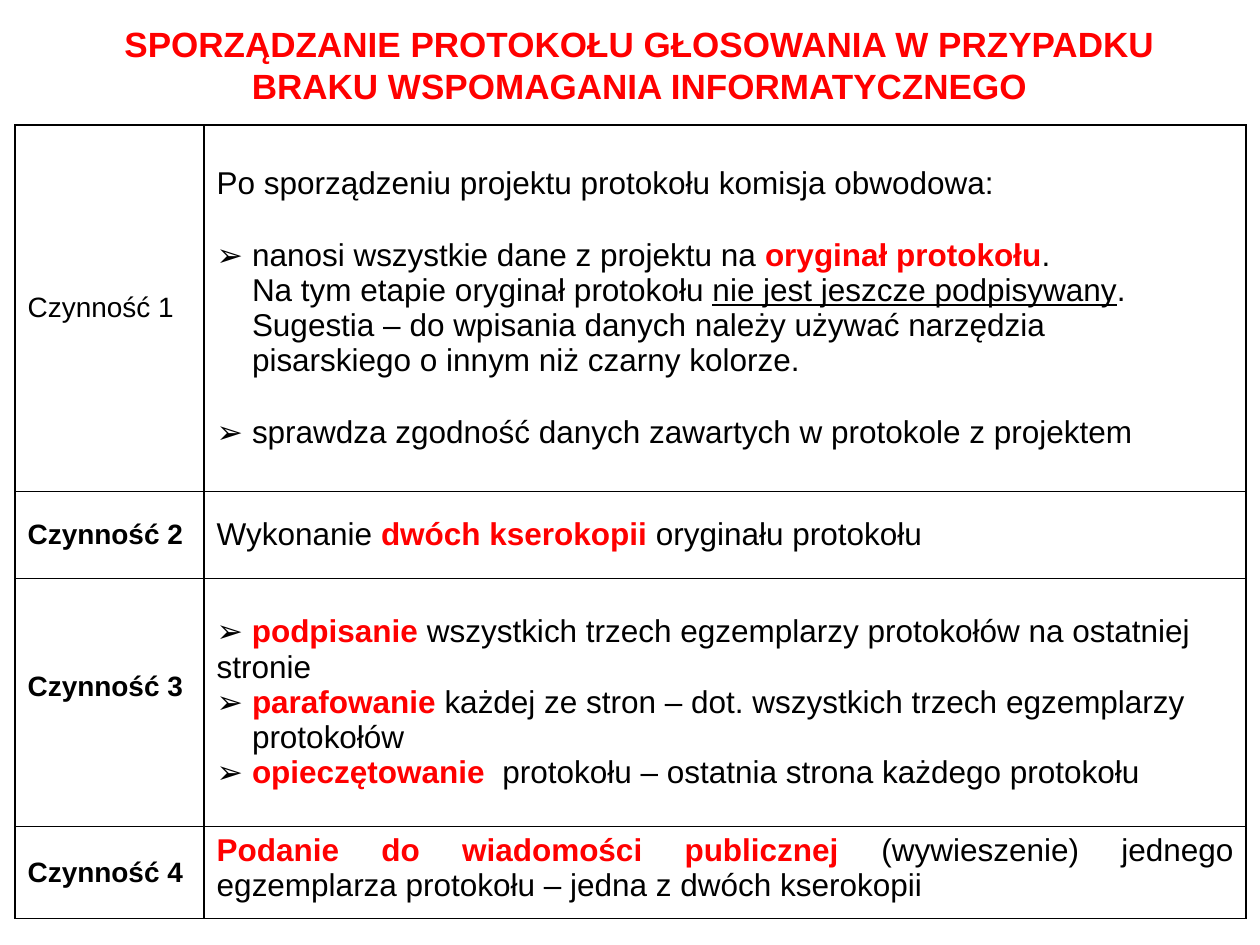
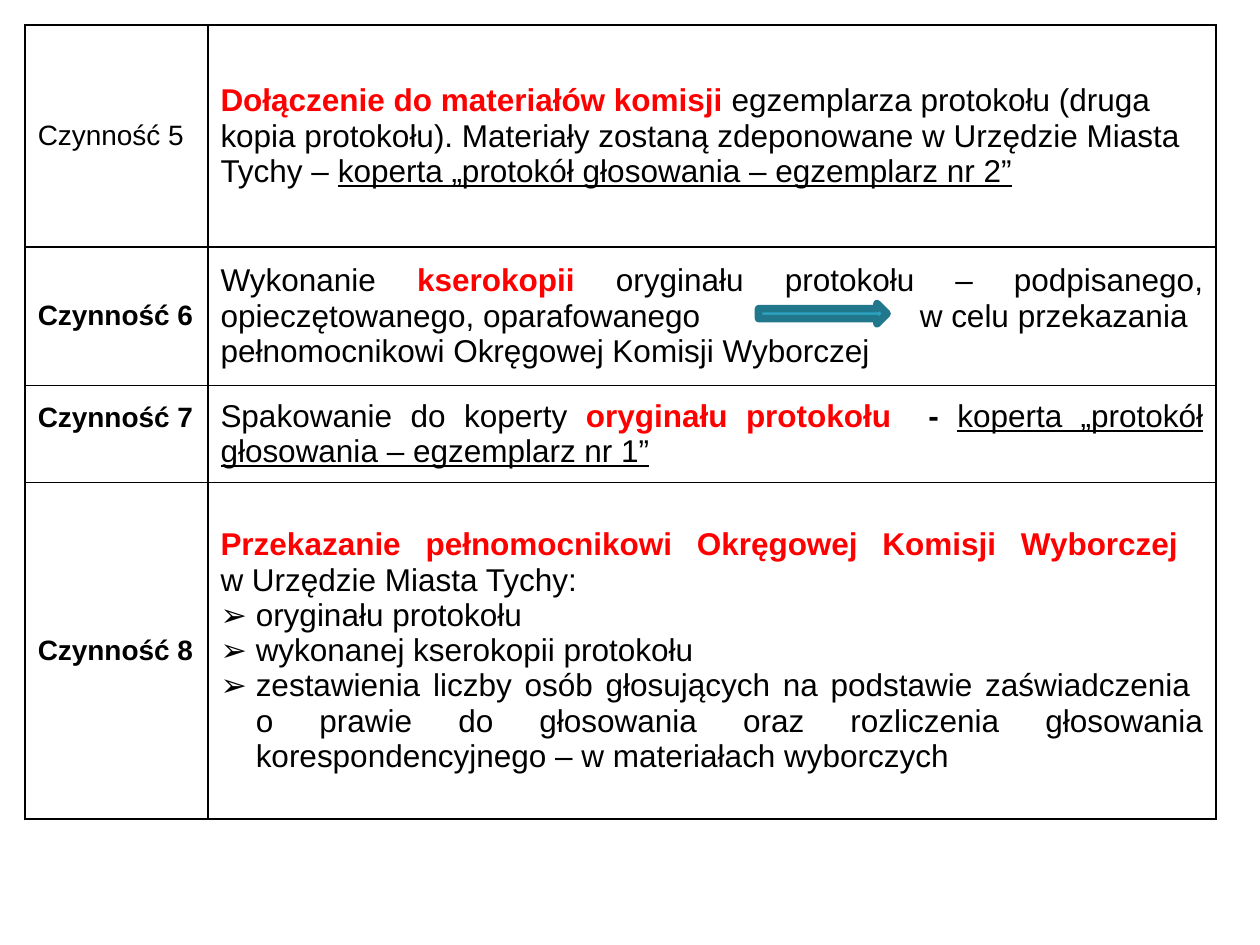
from dataclasses import dataclass

from lxml import etree
from pptx import Presentation
from pptx.dml.color import RGBColor
from pptx.enum.shapes import MSO_SHAPE
from pptx.enum.text import MSO_ANCHOR, MSO_AUTO_SIZE, PP_ALIGN
from pptx.oxml.ns import qn
from pptx.util import Inches, Pt

# Shared look
FONT = "Arial"
BLACK, WHITE, RED = "000000", "FFFFFF", "FF0000"
ARROW_FILL, ARROW_LINE = "2DA2BF", "21788D"
TITLE_SIZE, LABEL_SIZE, BODY_SIZE = 20, 16, 18
LINE_GAP = Pt(20.7)
HANGING = Inches(0.28)
BORDER = Pt(1)
TITLE_ONLY, BLANK = 5, 6
LEFT, CENTER, JUSTIFY = PP_ALIGN.LEFT, PP_ALIGN.CENTER, PP_ALIGN.JUSTIFY
TOP, MIDDLE = MSO_ANCHOR.TOP, MSO_ANCHOR.MIDDLE
NO_AUTOFIT = MSO_AUTO_SIZE.NONE
RIGHT_ARROW = MSO_SHAPE.RIGHT_ARROW


@dataclass
class Line:
    """A paragraph: runs are (text, style) pairs; kind sets bullet and indent."""
    runs: list
    kind: str = "plain"
    align: PP_ALIGN = LEFT
    gap: bool = False
    tab: float = 0


@dataclass
class Step:
    number: int
    height: float
    lines: list
    label_bold: bool = True
    label_lift: float = 0.05
    anchor: MSO_ANCHOR = MIDDLE


TITLE = ("SPORZĄDZANIE PROTOKOŁU GŁOSOWANIA W PRZYPADKU "
         "BRAKU WSPOMAGANIA INFORMATYCZNEGO")

FIRST_STEPS = [
    Step(1, 2.91, [
        Line([("Po sporządzeniu projektu protokołu komisja obwodowa:", "")]),
        Line([("nanosi wszystkie dane z projektu na ", ""),
              ("oryginał protokołu", "red"), (".", "")], "bullet", gap=True),
        Line([("Na tym etapie oryginał protokołu ", ""),
              ("nie jest jeszcze podpisywany", "underline"), (".", "")], "indent", JUSTIFY),
        Line([("Sugestia – do wpisania danych należy używać narzędzia", "")], "indent", JUSTIFY),
        Line([("pisarskiego o innym niż czarny kolorze.", "")], "indent", JUSTIFY),
        Line([("sprawdza zgodność danych zawartych w protokole z projektem", "")],
             "bullet", JUSTIFY, gap=True),
    ], label_bold=False),
    Step(2, 0.69, [
        Line([("Wykonanie ", ""), ("dwóch kserokopii ", "red"), ("oryginału protokołu", "")]),
    ]),
    Step(3, 1.97, [
        Line([(" podpisanie", "red"),
              (" wszystkich trzech egzemplarzy protokołów na ostatniej stronie", "")],
             "flush bullet"),
        Line([("parafowanie", "red"),
              (" każdej ze stron – dot. wszystkich trzech egzemplarzy", "")], "bullet"),
        Line([("protokołów", "")], "indent"),
        Line([("opieczętowanie ", "red"),
              (" protokołu – ostatnia strona każdego protokołu", "")], "bullet"),
    ], label_lift=0.29),
    Step(4, 0.73, [
        Line([("Podanie do wiadomości publicznej ", "red"),
              ("(wywieszenie) jednego egzemplarza protokołu – jedna z dwóch kserokopii", "")],
             align=JUSTIFY),
    ], anchor=TOP),
]

LAST_STEPS = [
    Step(5, 1.76, [
        Line([("Dołączenie do materiałów komisji ", "red"),
              ("egzemplarza protokołu (druga kopia protokołu). Materiały zostaną "
               "zdeponowane w Urzędzie Miasta Tychy – ", ""),
              ("koperta „protokół głosowania – egzemplarz nr 2”", "underline")]),
    ], label_bold=False),
    # The tab leaves room for the arrow; its line is left-aligned so it stays put
    Step(6, 1.1, [
        Line([("Wykonanie ", ""), ("kserokopii ", "red"),
              ("oryginału protokołu – podpisanego,\n", "")], align=JUSTIFY),
        Line([("opieczętowanego, oparafowanego\tw celu przekazania", "")], tab=5.55),
        Line([("pełnomocnikowi Okręgowej Komisji Wyborczej", "")]),
    ]),
    Step(7, 0.77, [
        Line([("Spakowanie do koperty ", ""), ("oryginału protokołu ", "red"), (" - ", "bold"),
              ("koperta „protokół głosowania – egzemplarz nr 1”", "underline")],
             align=JUSTIFY),
    ], label_lift=0.3),
    Step(8, 2.67, [
        Line([("Przekazanie pełnomocnikowi Okręgowej Komisji Wyborczej \n", "red"),
              ("w Urzędzie Miasta Tychy:", "")], align=JUSTIFY),
        Line([("oryginału protokołu", "")], "bullet"),
        Line([("wykonanej kserokopii protokołu", "")], "bullet"),
        Line([("zestawienia liczby osób głosujących na podstawie zaświadczenia \n"
               "o prawie do głosowania oraz rozliczenia głosowania\n"
               "korespondencyjnego – w materiałach wyborczych", "")], "bullet", JUSTIFY),
    ]),
]
# Step six: the justified first line runs on into the line with the tab
opening, continuation, _ = LAST_STEPS[1].lines
LAST_STEPS[1].lines[:2] = [
    Line(opening.runs + continuation.runs, align=JUSTIFY, tab=continuation.tab)]


def color(hex_value):
    return RGBColor.from_string(hex_value)


def add_element(parent, tag, **attributes):
    element = etree.SubElement(parent, qn(tag))
    for name, value in attributes.items():
        element.set(name, str(value))
    return element


def set_font(font, size, bold=False, hex_value=BLACK):
    font.name, font.size, font.bold = FONT, Pt(size), bold
    font.color.rgb = color(hex_value)


def set_indent(paragraph, line):
    """Add the indent, bullet and tab stop of a line."""
    properties = paragraph._p.get_or_add_pPr()
    if line.kind != "plain":
        margin = 0 if line.kind == "flush bullet" else HANGING
        properties.set("marL", str(margin))
        properties.set("indent", str(-margin if line.kind == "bullet" else 0))
    if "bullet" in line.kind:
        add_element(add_element(properties, "a:buClr"), "a:srgbClr", val=BLACK)
        add_element(properties, "a:buFont", typeface=FONT)
        add_element(properties, "a:buChar", char="➢")
    if line.tab:
        stops = add_element(properties, "a:tabLst")
        add_element(stops, "a:tab", pos=Inches(line.tab), algn="l")


def write_line(paragraph, line):
    set_indent(paragraph, line)
    paragraph.alignment = line.align
    if line.gap:
        paragraph.space_before = LINE_GAP
    set_font(paragraph.font, BODY_SIZE)
    for text, style in line.runs:
        for index, part in enumerate(text.split("\n")):
            if index:
                paragraph.add_line_break()
            if not part:
                continue
            run = paragraph.add_run()
            run.text = part
            set_font(run.font, BODY_SIZE, style in ("red", "bold"),
                     RED if style == "red" else BLACK)
            if style == "underline":
                run.font.underline = True


def set_borders(cell):
    properties = cell._tc.get_or_add_tcPr()
    for side in "LRTB":
        border = add_element(properties, f"a:ln{side}", w=BORDER)
        add_element(add_element(border, "a:solidFill"), "a:srgbClr", val=BLACK)


def add_steps_table(slide, left, top, column_widths, steps):
    """Table of steps: a label column and a description column."""
    height = sum(step.height for step in steps)
    frame = slide.shapes.add_table(len(steps), 2, Inches(left), Inches(top),
                                   Inches(sum(column_widths)), Inches(height))
    table = frame.table
    table.first_row = table.horz_banding = False
    for column, width in zip(table.columns, column_widths):
        column.width = Inches(width)

    for index, step in enumerate(steps):
        table.rows[index].height = Inches(step.height)
        label, description = table.cell(index, 0), table.cell(index, 1)
        for cell in (label, description):
            set_borders(cell)
            cell.fill.solid()
            cell.fill.fore_color.rgb = color(WHITE)

        # Label
        label.vertical_anchor = MIDDLE
        label.margin_bottom = Inches(step.label_lift)
        paragraph = label.text_frame.paragraphs[0]
        paragraph.text = f"Czynność {step.number}"
        set_font(paragraph.font, LABEL_SIZE, step.label_bold)

        # Description
        description.vertical_anchor = step.anchor
        text_frame = description.text_frame
        for position, line in enumerate(step.lines):
            paragraph = text_frame.add_paragraph() if position else text_frame.paragraphs[0]
            write_line(paragraph, line)


def format_title(slide, left, top, width, height):
    title = slide.shapes.title
    title.left, title.top = Inches(left), Inches(top)
    title.width, title.height = Inches(width), Inches(height)
    text_frame = title.text_frame
    text_frame.word_wrap = True
    text_frame.auto_size = NO_AUTOFIT
    text_frame.vertical_anchor = MIDDLE
    paragraph = text_frame.paragraphs[0]
    paragraph.text = TITLE
    paragraph.alignment = CENTER
    set_font(paragraph.font, TITLE_SIZE, True, RED)


def add_arrow(slide, left, top, width, height):
    arrow = slide.shapes.add_shape(RIGHT_ARROW, Inches(left), Inches(top),
                                   Inches(width), Inches(height))
    arrow.shadow.inherit = False
    arrow.fill.solid()
    arrow.fill.fore_color.rgb = color(ARROW_FILL)
    arrow.line.color.rgb = color(ARROW_LINE)
    arrow.line.width = Pt(4.33)
    add_element(arrow.line._get_or_add_ln(), "a:round")


def build_first_slide(presentation):
    slide = presentation.slides.add_slide(presentation.slide_layouts[TITLE_ONLY])
    format_title(slide, 0.43, 0.13, 9.29, 0.77)
    add_steps_table(slide, 0.12, 0.99, (1.5, 8.27), FIRST_STEPS)


def build_second_slide(presentation):
    slide = presentation.slides.add_slide(presentation.slide_layouts[BLANK])
    add_steps_table(slide, 0.2, 0.2, (1.45, 8), LAST_STEPS)
    add_arrow(slide, 6.02, 2.41, 1.02, 0.16)


def main():
    presentation = Presentation()
    presentation.slide_width, presentation.slide_height = Inches(10), Inches(7.5)
    build_first_slide(presentation)
    build_second_slide(presentation)
    presentation.save("out.pptx")


if __name__ == "__main__":
    main()
